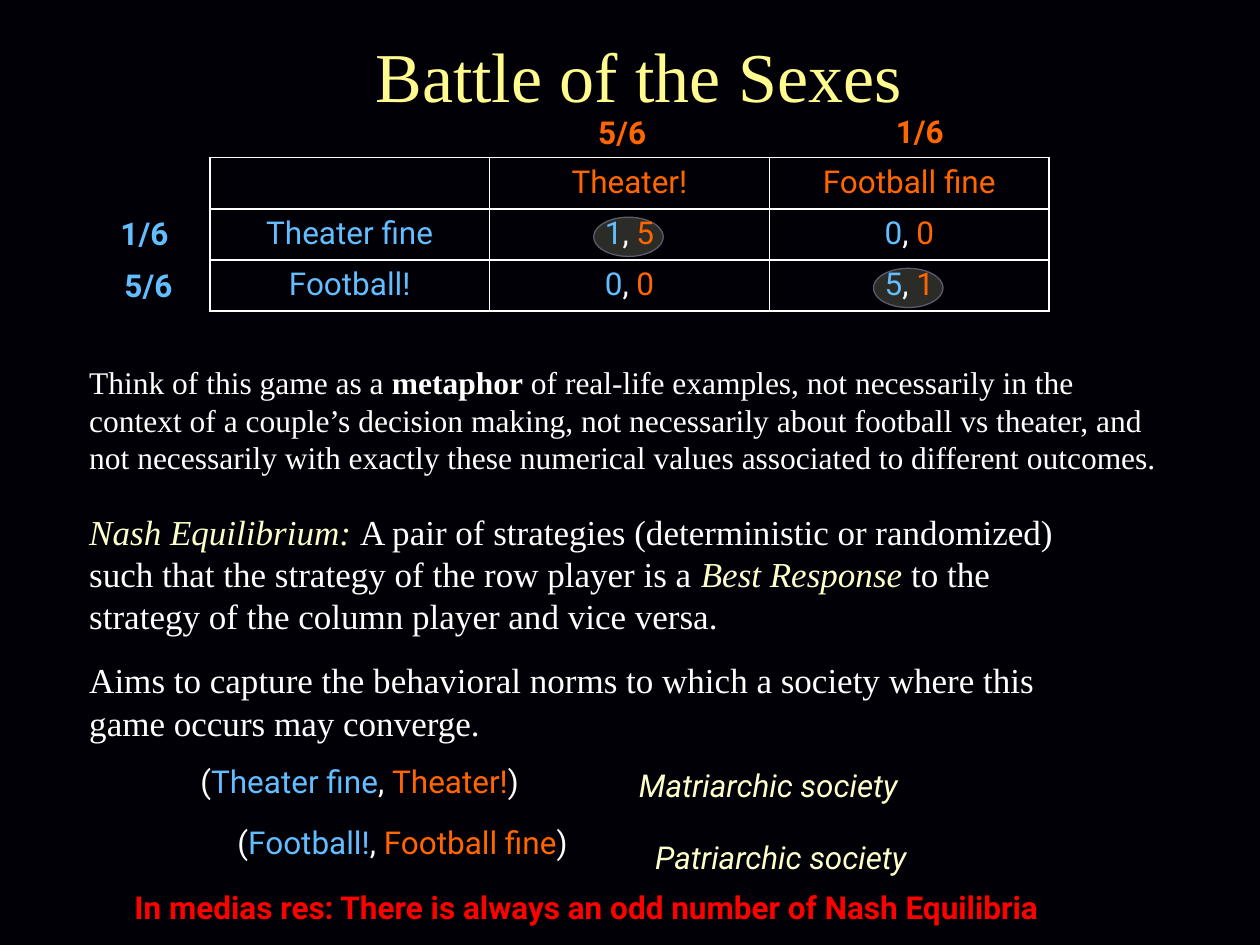
from dataclasses import dataclass

from lxml import etree
from pptx import Presentation
from pptx.dml.color import RGBColor
from pptx.enum import shapes, text
from pptx.oxml import ns
from pptx.util import Cm, Pt


@dataclass(frozen=True)
class Theme:
    background: str = "010006"
    white: str = "FFFFFF"
    title: str = "FFFB8F"
    row_player: str = "63BEFF"
    column_player: str = "FF6600"
    accent: str = "FFFFCC"
    outline: str = "5A5C6C"
    alert: str = "FF0000"
    serif: str = "Times New Roman"
    sans: str = "Roboto"
    title_size: int = 40
    body_size: int = 20
    label_size: int = 18


THEME = Theme()
ROW_HEIGHT, COLUMN_WIDTH = 1.03, 5.64
CENTER = text.PP_ALIGN.CENTER


def write_runs(paragraph, runs, font=THEME.sans, size=THEME.label_size):
    """Each run is (text, colour) or (text, colour, style); style holds "b" or "i"."""
    for content, color, *style in runs:
        run = paragraph.add_run()
        run.text = content
        run.font.name, run.font.size = font, Pt(size)
        run.font.color.rgb = RGBColor.from_string(color)
        run.font.bold, run.font.italic = "b" in style, "i" in style


def add_text(slide, box, runs, wrap=False, align=text.PP_ALIGN.LEFT, **font):
    shape = slide.shapes.add_textbox(*map(Cm, box))
    frame = shape.text_frame
    frame.word_wrap = wrap
    frame.auto_size = text.MSO_AUTO_SIZE.SHAPE_TO_FIT_TEXT
    frame.paragraphs[0].alignment = align
    write_runs(frame.paragraphs[0], runs, **font)


def set_borders(cell, sides):
    """Draw white lines on the given sides (of "LRTB") and none on the others."""
    properties = cell._tc.get_or_add_tcPr()
    for side in "LRTB":
        line = etree.SubElement(properties, ns.qn(f"a:ln{side}"), w=str(Pt(1)))
        if side in sides:
            fill = etree.SubElement(line, ns.qn("a:solidFill"))
            etree.SubElement(fill, ns.qn("a:srgbClr"), val=THEME.white)
        else:
            etree.SubElement(line, ns.qn("a:noFill"))


def add_equilibrium_mark(slide, center_x, center_y):
    width, height = 1.4, 0.79
    mark = slide.shapes.add_shape(
        shapes.MSO_SHAPE.OVAL, Cm(center_x - width / 2), Cm(center_y - height / 2),
        Cm(width), Cm(height))
    mark.shadow.inherit = False
    mark.fill.solid()
    mark.fill.fore_color.rgb = RGBColor.from_string(THEME.accent)
    color = mark.fill._xPr.find(".//" + ns.qn("a:srgbClr"))
    etree.SubElement(color, ns.qn("a:alpha"), val="17000")
    mark.line.color.rgb = RGBColor.from_string(THEME.outline)
    mark.line.width = Pt(0.75)


def payoff(row_value, column_value):
    return [(row_value, THEME.row_player), (", ", THEME.white),
            (column_value, THEME.column_player)]


def add_payoff_table(slide, left, top):
    for row, column in ((1, 1), (2, 2)):
        add_equilibrium_mark(slide, left + (column + 0.5) * COLUMN_WIDTH - 0.02,
                             top + (row + 0.5) * ROW_HEIGHT + 0.05)
    rows = [
        [[], [("Theater!", THEME.column_player)], [("Football fine", THEME.column_player)]],
        [[("Theater fine", THEME.row_player)], payoff("1", "5"), payoff("0", "0")],
        [[("Football!", THEME.row_player)], payoff("0", "0"), payoff("5", "1")],
        [[], [], []],
    ]
    table = slide.shapes.add_table(
        len(rows), 3, Cm(left), Cm(top),
        Cm(3 * COLUMN_WIDTH), Cm(len(rows) * ROW_HEIGHT)).table
    table.first_row = table.horz_banding = False
    for column in table.columns:
        column.width = Cm(COLUMN_WIDTH)
    last = len(rows) - 1
    for index, row in enumerate(rows):
        table.rows[index].height = Cm(ROW_HEIGHT)
        for cell, runs in zip(table.rows[index].cells, row):
            set_borders(cell, "T" if index == last else "LRTB")
            cell.fill.background()
            paragraph = cell.text_frame.paragraphs[0]
            paragraph.alignment = CENTER
            write_runs(paragraph, runs)
    table.cell(last, 0).merge(table.cell(last, 2))


def add_probabilities(slide, left, top):
    """Place the mixed strategies around the table whose corner is given."""
    labels = [
        (-2.05, 1.02, "1/6", THEME.row_player),
        (-1.97, 2.06, "5/6", THEME.row_player),
        (13.58, -1.04, "1/6", THEME.column_player),
        (7.58, -1.02, "5/6", THEME.column_player),
    ]
    for x, y, label, color in labels:
        add_text(slide, (left + x, top + y, 1.7, 1.02), [(label, color, "b")])


def add_explanation(slide, left, top):
    white, accent = THEME.white, THEME.accent
    paragraphs = [
        (0, 22.12, 2.57, THEME.label_size, [
            ("Think of this game as a ", white),
            ("metaphor", white, "b"),
            (" of real-life examples, not necessarily in the context of a couple’s "
             "decision making, not necessarily about football vs theater, and not "
             "necessarily with exactly these numerical values associated to "
             "different outcomes.", white)]),
        (2.97, 20.6, 2.82, THEME.body_size, [
            ("Nash Equilibrium: ", accent, "i"),
            ("A pair of strategies (deterministic or randomized) such that the "
             "strategy of the row player is a ", white),
            ("Best Response", accent, "i"),
            (" to the strategy of the column player and vice versa.", white)]),
        (5.97, 21.13, 1.96, THEME.body_size, [
            ("Aims to capture the behavioral norms to which a society where this "
             "game occurs may converge.", white)]),
    ]
    for y, width, height, size, runs in paragraphs:
        add_text(slide, (left, top + y, width, height), runs,
                 wrap=True, font=THEME.serif, size=size)


def add_societies(slide, left, top):
    outcomes = [
        ((0, 0, 7.24), "Theater fine", "Theater!",
         (8.92, 0.08, 5.94), "Matriarchic society"),
        ((0.76, 1.22, 7.29), "Football!", "Football fine",
         (9.25, 1.52, 5.79), "Patriarchic society"),
    ]
    for pair_box, row_move, column_move, name_box, name in outcomes:
        pair = [("(", THEME.white), *payoff(row_move, column_move), (") ", THEME.white)]
        for (x, y, width), runs, align in (
                (pair_box, pair, CENTER),
                (name_box, [(name, THEME.accent, "i")], text.PP_ALIGN.LEFT)):
            add_text(slide, (left + x, top + y, width, 1.02), runs, align=align)


def main():
    presentation = Presentation()
    presentation.slide_width, presentation.slide_height = Cm(25.4), Cm(19.05)
    slide = presentation.slides.add_slide(presentation.slide_layouts[6])
    slide.background.fill.solid()
    slide.background.fill.fore_color.rgb = RGBColor.from_string(THEME.background)

    table_corner = (4.23, 3.18)
    add_payoff_table(slide, *table_corner)
    add_probabilities(slide, *table_corner)
    add_text(slide, (7.32, 0.53, 11.23, 1.96), [("Battle of the Sexes", THEME.title)],
             font=THEME.serif, size=THEME.title_size)
    add_explanation(slide, 1.55, 7.19)
    add_societies(slide, 3.71, 15.24)
    add_text(slide, (2.46, 17.78, 21.23, 1.02),
             [("In medias res: There is always an odd number of Nash Equilibria",
               THEME.alert, "b")])
    presentation.save("out.pptx")


if __name__ == "__main__":
    main()
